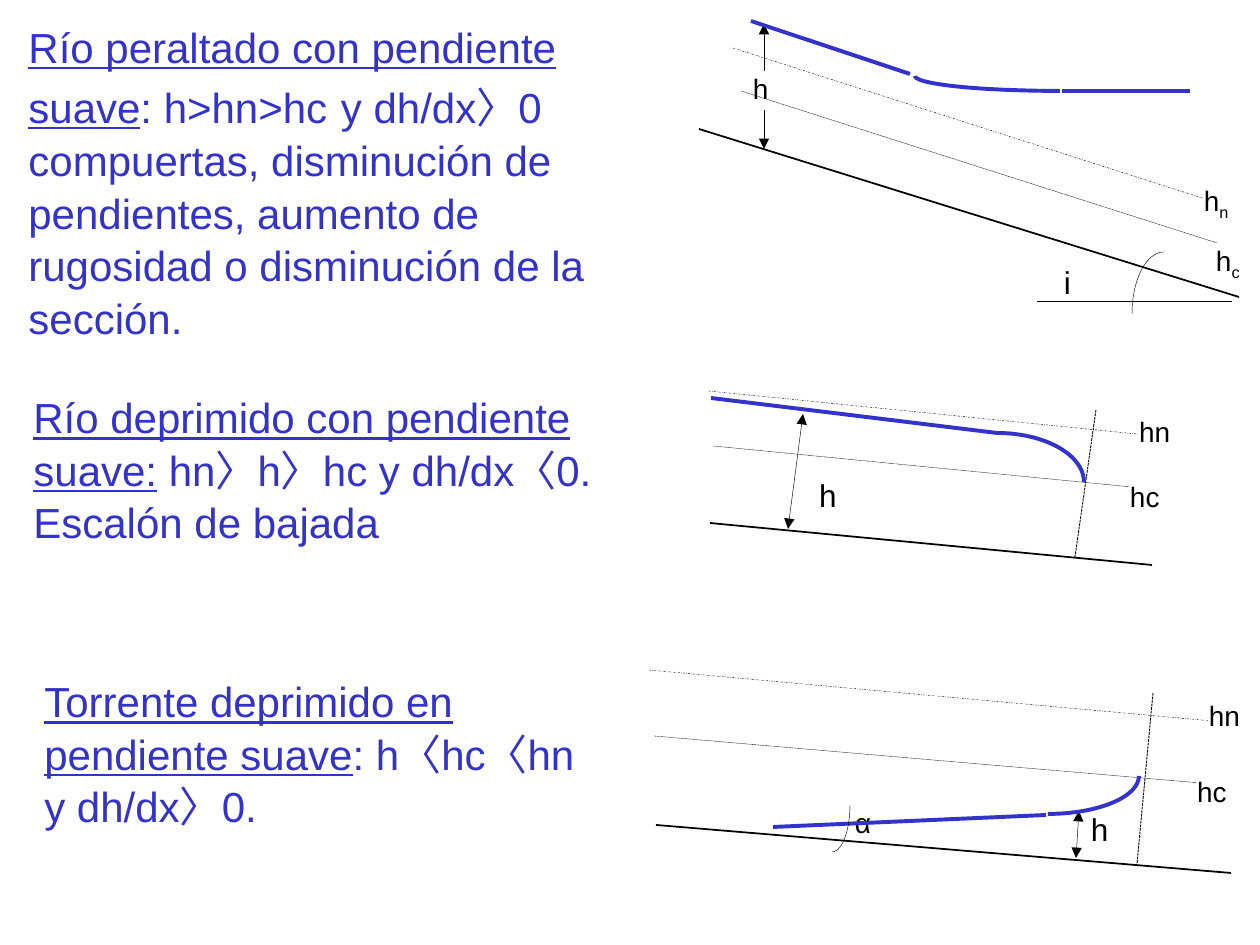
"""Slide of three river backwater profiles, each described beside its diagram."""
from math import cos, pi, sin

from lxml import etree
from pptx import Presentation
from pptx.dml.color import RGBColor
from pptx.enum.dml import MSO_LINE
from pptx.enum.shapes import MSO_CONNECTOR
from pptx.enum.text import MSO_ANCHOR
from pptx.oxml.ns import qn
from pptx.util import Pt

SCALE = 914400 / 126
BLUE = RGBColor(0x33, 0x33, 0xCC)
BLACK = RGBColor(0, 0, 0)
WHITE = RGBColor(255, 255, 255)
STRAIGHT = MSO_CONNECTOR.STRAIGHT
MIDDLE = MSO_ANCHOR.MIDDLE
DASH_DOT = MSO_LINE.DASH_DOT
DOT = MSO_LINE.ROUND_DOT
DASH = MSO_LINE.SQUARE_DOT
ARC_STEPS = 24


def px(*lengths):
    return [round(length * SCALE) for length in lengths]


def add_label(page, left, top, width, height, size, text, subscript=""):
    box = page.shapes.add_textbox(*px(left, top, width, height))
    box.fill.solid()
    box.fill.fore_color.rgb = WHITE
    frame = box.text_frame
    frame.word_wrap = True
    frame.margin_left, frame.margin_top, frame.margin_right, frame.margin_bottom = px(1, 1, 1, 1)
    para = frame.paragraphs[0]
    para.font.name = "Arial"
    para.font.size = Pt(size)
    para.font.color.rgb = BLACK
    para.add_run().text = text
    if subscript:
        span = para.add_run()
        span.text = subscript
        span.font._element.set("baseline", "-25000")


deck = Presentation()
deck.slide_width, deck.slide_height = px(1260, 945)
page = deck.slides.add_slide(deck.slide_layouts[6])

descriptions = [
    ((16, 18, 625, 326), [
        [("Río peraltado con pendiente suave", 24, BLUE, True), (": h>hn>hc", 24, BLUE, False),
         (" ", 28, BLACK, False), ("y dh/dx〉0", 24, BLUE, False)],
        [("compuertas, disminución de pendientes, aumento de rugosidad "
          "o disminución de la sección.", 24, BLUE, False)],
    ]),
    ((21, 386, 625, 165), [
        [("Río deprimido con pendiente suave:", 24, BLUE, True),
         (" hn〉h〉hc y dh/dx〈0.", 24, BLUE, False)],
        [("Escalón de bajada", 24, BLUE, False)],
    ]),
    ((32, 670, 564, 165), [
        [("Torrente deprimido en pendiente suave", 24, BLUE, True),
         (": h〈hc〈hn y dh/dx〉0.", 24, BLUE, False)],
    ]),
]
for bounds, paragraphs in descriptions:
    box = page.shapes.add_textbox(*px(*bounds))
    frame = box.text_frame
    frame.word_wrap = True
    frame.vertical_anchor = MIDDLE
    for index, spans in enumerate(paragraphs):
        para = frame.add_paragraph() if index else frame.paragraphs[0]
        para.line_spacing = 1.04
        para.font.name = "Arial"
        for text, size, color, underline in spans:
            span = para.add_run()
            span.text = text
            span.font.size = Pt(size)
            span.font.color.rgb = color
            span.font.underline = underline

depth_arrows = [(764, 24, 764, 149), (803, 414, 788, 529), (1079, 811, 1076, 858)]
bed_lines = [(699, 129, 1239, 297), (710, 523, 1152, 565), (656, 825, 1231, 873)]
normal_depths = [(733, 48, 1249, 213), (709, 391, 1157, 436), (649, 670, 1234, 723)]
critical_depths = [(741, 91, 1236, 249), (713, 446, 1142, 488), (654, 736, 1212, 784)]
water_surfaces = [(1062, 91, 1190, 91), (910, 74, 751, 21),
                  (711, 398, 997, 433), (773, 827, 1046, 815)]
sections = [(1096, 410, 1075, 557), (1153, 693, 1137, 864)]
horizontals = [(1232, 301, 1037, 301)]
line_styles = [
    (depth_arrows, BLACK, 0.25, None),
    (bed_lines, BLACK, 1, None),
    (normal_depths, BLACK, 0.25, DASH_DOT),
    (critical_depths, BLACK, 0.25, DOT),
    (water_surfaces, BLUE, 2.25, None),
    (sections, BLACK, 0.5, DASH),
    (horizontals, BLACK, 0.25, None),
]
inner_labels = [
    (1063, 262, 52, 52, 18, "i"),
    (752, 71, 39, 39, 16, "h"),
    (818, 475, 34, 39, 18, "h"),
    (854, 805, 40, 64, 16, "α"),
    (1090, 809, 25, 62, 18, "h"),
]
for lines, color, width, dash in line_styles:
    for ends in lines:
        line = page.shapes.add_connector(STRAIGHT, *px(*ends))
        line.line.color.rgb = color
        line.line.width = Pt(width)
        if dash is not None:
            line.line.dash_style = dash
        if lines is depth_arrows:
            for end in ("a:headEnd", "a:tailEnd"):
                etree.SubElement(line.line._get_or_add_ln(), qn(end), type="triangle")
        etree.SubElement(line._element.spPr, qn("a:effectLst"))
    if lines is depth_arrows:
        for label in inner_labels:
            add_label(page, *label)

quarter_arcs = [
    (1164, 252, 1132, 314, BLACK, 0.25),
    (1060, 91, 915, 76, BLUE, 2.25),
    (997, 433, 1084, 482, BLUE, 2.25),
    (832, 852, 850, 805, BLACK, 0.25),
    (1048, 814, 1139, 776, BLUE, 2.25),
]
for start_x, start_y, end_x, end_y, color, width in quarter_arcs:
    angles = [pi / 2 * step / ARC_STEPS for step in range(ARC_STEPS + 1)]
    points = [px(start_x + (end_x - start_x) * sin(angle),
                 start_y + (end_y - start_y) * (1 - cos(angle))) for angle in angles]
    builder = page.shapes.build_freeform(*points[0])
    builder.add_line_segments(points[1:], close=False)
    arc = builder.convert_to_shape()
    arc.shadow.inherit = False
    arc.fill.background()
    arc.line.color.rgb = color
    arc.line.width = Pt(width)

outer_labels = [
    (1203, 183, 52, 40, 16, "h", "n"),
    (1215, 243, 45, 39, 16, "h", "c"),
    (1129, 479, 54, 35, 16, "hc"),
    (1138, 414, 47, 39, 16, "hn"),
    (1196, 774, 47, 42, 16, "hc"),
    (1208, 698, 52, 47, 16, "hn"),
]
for label in outer_labels:
    add_label(page, *label)

deck.save("out.pptx")
